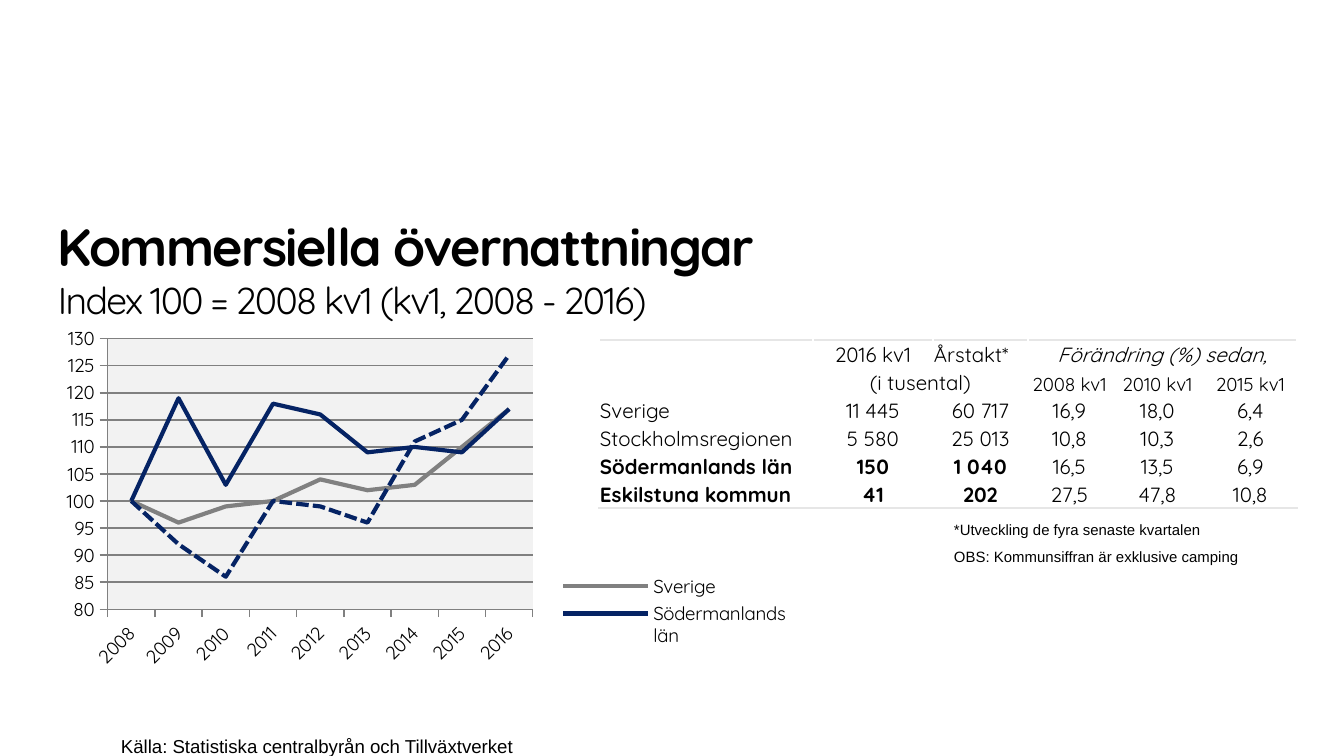
import pptx
import pptx.chart.data
import pptx.dml.color
import pptx.enum.chart
import pptx.enum.dml
import pptx.enum.text
import pptx.oxml
import pptx.oxml.ns
import pptx.util
from lxml import etree

PX = 6804  # EMU per px, at 134.4 px to the inch
COLORS = {"text": "000000", "rule": "E6E6E6", "plot": "F2F2F2",
          "gray": "808080", "navy": "052364"}
HEADING_FONT, NOTE_FONT = "Quicksand", "Arial"
NS = 'xmlns:a="http://schemas.openxmlformats.org/drawingml/2006/main"'
CHART_NS = 'xmlns:c="http://schemas.openxmlformats.org/drawingml/2006/chart"'

YEARS = [str(year) for year in range(2008, 2017)]
INDEX_SERIES = [
    ("Sverige", "gray", False, [100, 96, 99, 100, 104, 102, 103, 110, 117]),
    ("Södermanlands län", "navy", False, [100, 119, 103, 118, 116, 109, 110, 109, 117]),
    ("Eskilstuna kommun", "navy", True, [100, 92, 86, 100, 99, 96, 111, 115, 127]),
]
COLUMN_WIDTHS = [214, 120, 95, 83, 93, 93]
ROW_HEIGHT = 28
OVERNIGHT_ROWS = [
    ["", "2016 kv1", "Årstakt*", "Förändring (%) sedan,", "", ""],
    ["", "(i tusental)", "", "2008 kv1", "2010 kv1", "2015 kv1"],
    ["Sverige", "11 445", "60 717", "16,9", "18,0", "6,4"],
    ["Stockholmsregionen", "5 580", "25 013", "10,8", "10,3", "2,6"],
    ["Södermanlands län", "150", "1 040", "16,5", "13,5", "6,9"],
    ["Eskilstuna kommun", "41", "202", "27,5", "47,8", "10,8"],
]


def px(length):
    return pptx.util.Emu(length * PX)


def rgb(name):
    return pptx.dml.color.RGBColor.from_string(COLORS[name])


def style_font(font, size, face, bold=False, italic=False):
    font.size = pptx.util.Pt(size)
    font.name = face
    font.bold = bold
    font.italic = italic
    font.color.rgb = rgb("text")


def add_run(paragraph, text, size, face, bold=False, italic=False):
    run = paragraph.add_run()
    run.text = text
    style_font(run.font, size, face, bold, italic)
    return run


def clear_margins(frame):
    frame.margin_left = frame.margin_top = frame.margin_right = frame.margin_bottom = 0
    frame.word_wrap = True
    frame.vertical_anchor = pptx.enum.text.MSO_ANCHOR.TOP


def fill_title(title):
    title.left, title.top, title.width, title.height = px(58), px(214), px(1094), px(108)
    clear_margins(title.text_frame)
    title.text_frame.auto_size = pptx.enum.text.MSO_AUTO_SIZE.NONE
    heading = title.text_frame.paragraphs[0]
    heading.alignment = pptx.enum.text.PP_ALIGN.LEFT
    heading.line_spacing = 1.0
    heading.space_before = pptx.util.Pt(0)
    main_line = add_run(heading, "Kommersiella övernattningar", 28, HEADING_FONT, bold=True)
    heading.add_line_break()
    sub_line = add_run(heading, "Index 100 = 2008 kv1 (kv1, 2008 - 2016)", 20, HEADING_FONT)
    for run in (main_line, sub_line):
        run.font._element.set("spc", "-90")


def add_note(slide, box, lines, size, line_spacing):
    frame = slide.shapes.add_textbox(*map(px, box)).text_frame
    clear_margins(frame)
    for number, line in enumerate(lines):
        paragraph = frame.add_paragraph() if number else frame.paragraphs[0]
        paragraph.line_spacing = line_spacing
        add_run(paragraph, line, size, NOTE_FONT)


def add_rule(cell, side):
    """Draw a thin line on the top (T) or bottom (B) of a cell."""
    rule = pptx.oxml.parse_xml(
        f'<a:ln{side} {NS} w="12700"><a:solidFill><a:srgbClr val="{COLORS["rule"]}"/>'
        f'</a:solidFill></a:ln{side}>')
    cell._tc.get_or_add_tcPr().insert(0, rule)


def fill_cell(cell, text, row, column):
    cell.margin_left = cell.margin_top = cell.margin_right = px(1)
    cell.margin_bottom = 0
    cell.vertical_anchor = pptx.enum.text.MSO_ANCHOR.BOTTOM
    cell.fill.background()
    paragraph = cell.text_frame.paragraphs[0]
    left_aligned = column == 0 or text == "Årstakt*"
    align = pptx.enum.text.PP_ALIGN
    paragraph.alignment = align.LEFT if left_aligned else align.CENTER
    if text:
        add_run(paragraph, text, 10 if row == 1 and column > 2 else 11, HEADING_FONT,
                bold=row > 3 and column < 3, italic=row == 0 and column == 3)
    else:
        etree.SubElement(paragraph._p, pptx.oxml.ns.qn("a:endParaRPr"), sz="1100")


def add_overnight_table(slide):
    last_row = len(OVERNIGHT_ROWS) - 1
    table = slide.shapes.add_table(
        len(OVERNIGHT_ROWS), len(COLUMN_WIDTHS), px(599), px(340),
        px(sum(COLUMN_WIDTHS)), px(ROW_HEIGHT * len(OVERNIGHT_ROWS))).table
    table.first_row = table.horz_banding = False
    for column, width in zip(table.columns, COLUMN_WIDTHS):
        column.width = px(width)
    for row, texts in enumerate(OVERNIGHT_ROWS):
        table.rows[row].height = px(ROW_HEIGHT)
        for column, text in enumerate(texts):
            cell = table.cell(row, column)
            fill_cell(cell, text, row, column)
            if row in (0, last_row):
                add_rule(cell, "B" if row else "T")
    table.cell(0, 3).merge(table.cell(0, 5))
    table.cell(1, 1).merge(table.cell(1, 2))


def layout_xml(x, y, w, h, inner=False):
    """Manual chart layout in fractions of the chart area."""
    target = '<c:layoutTarget val="inner"/>' if inner else ""
    return pptx.oxml.parse_xml(
        f'<c:layout {CHART_NS}><c:manualLayout>{target}'
        '<c:xMode val="edge"/><c:yMode val="edge"/>'
        f'<c:x val="{x}"/><c:y val="{y}"/><c:w val="{w}"/><c:h val="{h}"/>'
        '</c:manualLayout></c:layout>')


def format_axes(chart):
    values, years = chart.value_axis, chart.category_axis
    values.minimum_scale, values.maximum_scale, values.major_unit = 80, 130, 5
    values.tick_labels.number_format = "0"
    values.tick_labels.number_format_is_linked = False
    for line in (values.format.line, years.format.line, values.major_gridlines.format.line):
        line.color.rgb = rgb("gray")
        line.width = pptx.util.Pt(0.75)
    for axis in (values, years):
        axis.major_tick_mark = pptx.enum.chart.XL_TICK_MARK.OUTSIDE
        style_font(axis.tick_labels.font, 10, HEADING_FONT)
    years.tick_labels.font._element.getparent().getparent().getparent().find(
        pptx.oxml.ns.qn("a:bodyPr")).set("rot", "-2700000")


def format_plot_and_legend(chart):
    qn = pptx.oxml.ns.qn
    plot_area = chart._chartSpace.chart.plotArea
    for layout in plot_area.findall(qn("c:layout")):
        plot_area.remove(layout)
    plot_area.insert(0, layout_xml(0.08, 0.05, 0.57, 0.76, inner=True))
    plot_area.append(pptx.oxml.parse_xml(
        f'<c:spPr {CHART_NS} {NS}><a:solidFill><a:srgbClr val="{COLORS["plot"]}"/>'
        '</a:solidFill></c:spPr>'))
    chart.has_legend = True
    chart.legend.position = pptx.enum.chart.XL_LEGEND_POSITION.RIGHT
    chart.legend.include_in_layout = False
    style_font(chart.legend.font, 10, HEADING_FONT)
    legend = chart.legend._element
    for layout in legend.findall(qn("c:layout")):
        legend.remove(layout)
    legend.insert(1, pptx.oxml.parse_xml(
        f'<c:legendEntry {CHART_NS}><c:idx val="2"/><c:delete val="1"/></c:legendEntry>'))
    legend.insert(2, layout_xml(0.68, 0.7, 0.32, 0.23))


def add_index_chart(slide):
    index_data = pptx.chart.data.CategoryChartData(number_format="0")
    index_data.categories = YEARS
    for name, _, _, values in INDEX_SERIES:
        index_data.add_series(name, values)
    chart = slide.shapes.add_chart(pptx.enum.chart.XL_CHART_TYPE.LINE, px(48), px(321),
                                   px(746), px(356), index_data).chart
    chart.has_title = False
    style_font(chart.font, 10, HEADING_FONT)
    chart.plots[0].vary_by_categories = False
    for series, (_, color, dashed, _) in zip(chart.plots[0].series, INDEX_SERIES):
        series.smooth = False
        series.marker.style = pptx.enum.chart.XL_MARKER_STYLE.NONE
        series.format.line.color.rgb = rgb(color)
        series.format.line.width = pptx.util.Pt(2.25)
        if dashed:
            series.format.line.dash_style = pptx.enum.dml.MSO_LINE.SQUARE_DOT
    format_axes(chart)
    format_plot_and_legend(chart)


def main():
    deck = pptx.Presentation()
    deck.slide_width, deck.slide_height = px(1344), px(756)
    slide = deck.slides.add_slide(deck.slide_layouts[5])
    fill_title(slide.shapes.title)
    add_note(slide, (121, 712, 420, 44),
             ["Källa: Statistiska centralbyrån och Tillväxtverket"], 10, pptx.util.Pt(24))
    add_overnight_table(slide)
    add_note(slide, (954, 512, 340, 134),
             ["*Utveckling de fyra senaste kvartalen",
              "OBS: Kommunsiffran är exklusive camping"], 8, 1.5)
    add_index_chart(slide)
    deck.save("out.pptx")


if __name__ == "__main__":
    main()
